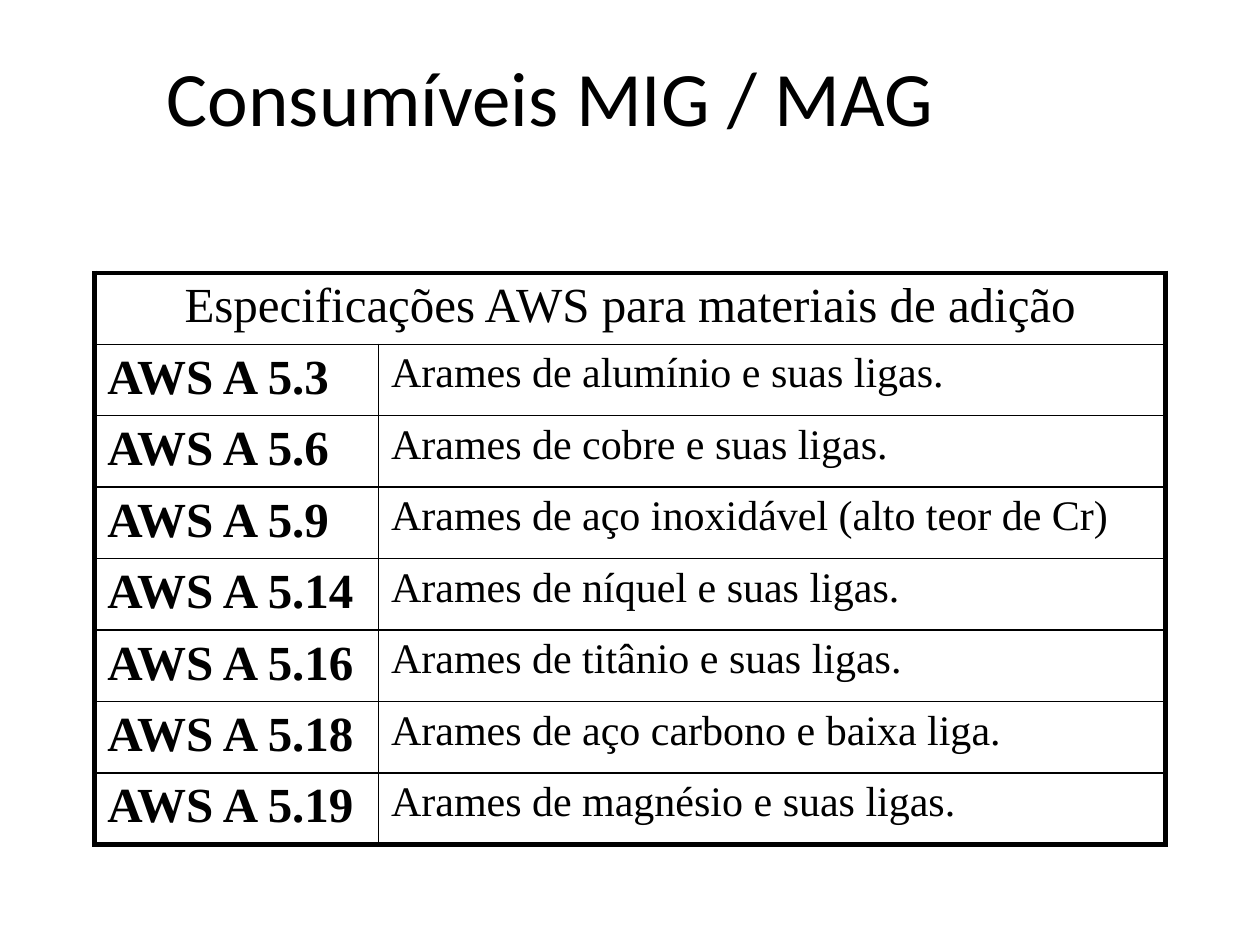
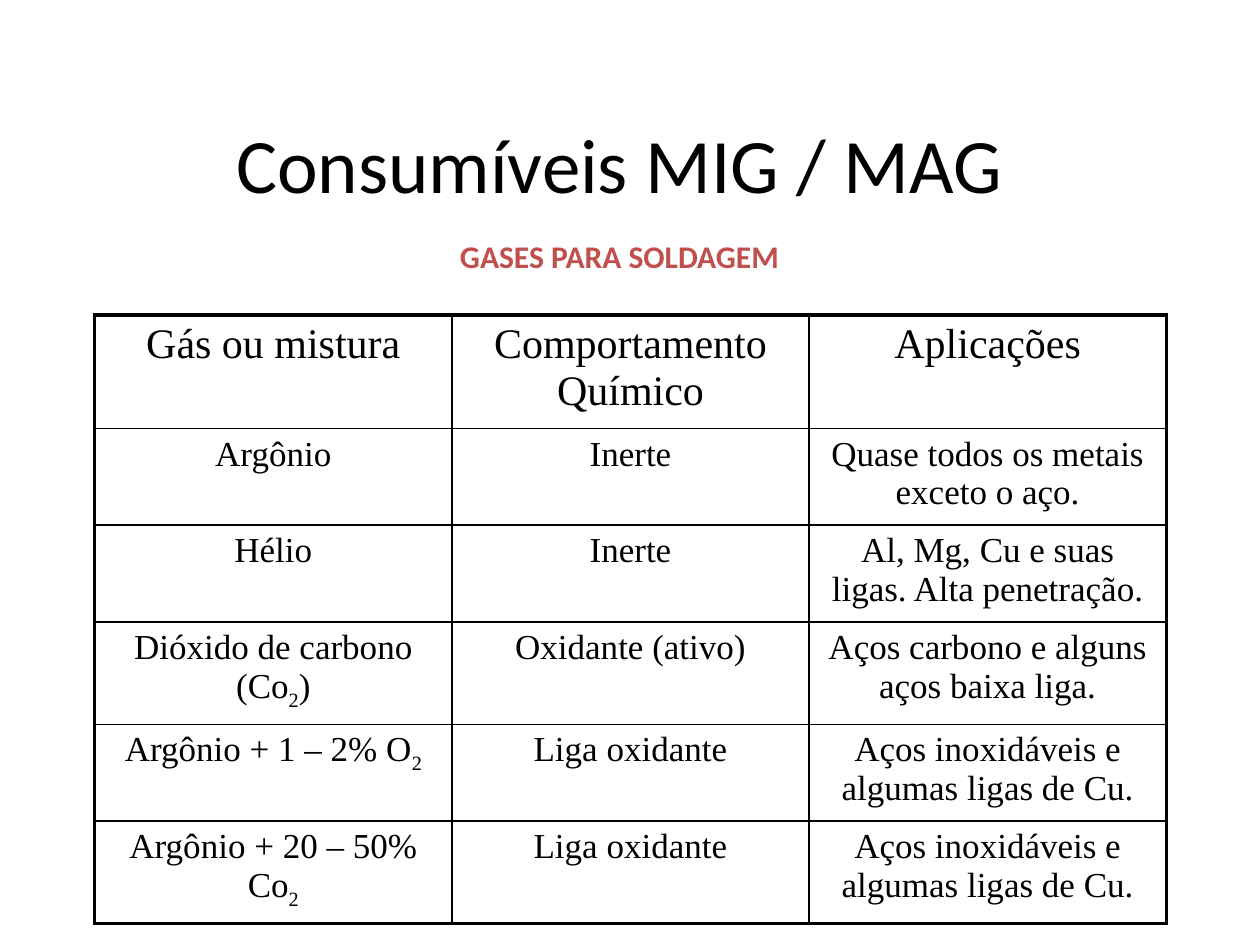
from dataclasses import dataclass

from lxml import etree
from pptx import Presentation
from pptx import util as u
from pptx.dml import color
from pptx.enum import text
from pptx.oxml import ns

LEFT, CENTER = text.PP_ALIGN.LEFT, text.PP_ALIGN.CENTER


@dataclass(frozen=True)
class Theme:
    ink: str = "000000"
    accent: str = "C0504D"
    title_font: str = "Calibri"
    table_font: str = "Times New Roman"
    title_size: int = 44
    subtitle_size: int = 18
    large: int = 28
    medium: int = 24
    small: int = 20
    grid_line: float = 1


@dataclass(frozen=True)
class Box:
    """Position and size in centimetres."""
    left: float
    top: float
    width: float
    height: float

    def lengths(self) -> list[u.Cm]:
        return [u.Cm(value) for value in (self.left, self.top, self.width, self.height)]


@dataclass(frozen=True)
class TextStyle:
    font: str
    size: int
    bold: bool = False
    align: text.PP_ALIGN = CENTER
    colour: str = Theme.ink


@dataclass(frozen=True)
class TableDesign:
    box: Box
    columns: list[float]
    row_heights: list[float]
    frame_line: float
    header_style: TextStyle
    column_styles: list[TextStyle]


THEME = Theme()
TITLE = "Consumíveis MIG / MAG"
TITLE_STYLE = TextStyle(THEME.title_font, THEME.title_size)
SUBTITLE_STYLE = TextStyle(THEME.title_font, THEME.subtitle_size, True, colour=THEME.accent)

WIRE_HEADER = "Especificações AWS para materiais de adição"
WIRE_ROWS = [
    ("AWS A 5.3", "Arames de alumínio e suas ligas."),
    ("AWS A 5.6", "Arames de cobre e suas ligas."),
    ("AWS A 5.9", "Arames de aço inoxidável (alto teor de Cr)"),
    ("AWS A 5.14", "Arames de níquel e suas ligas."),
    ("AWS A 5.16", "Arames de titânio e suas ligas."),
    ("AWS A 5.18", "Arames de aço carbono e baixa liga."),
    ("AWS A 5.19", "Arames de magnésio e suas ligas."),
]
WIRE_TABLE = TableDesign(
    box=Box(1.91, 5.5, 21.59, 11.52),
    columns=[5.72, 15.87],
    row_heights=[1.44] * 8,
    frame_line=3,
    header_style=TextStyle(THEME.table_font, THEME.large),
    column_styles=[
        TextStyle(THEME.table_font, THEME.large, True, LEFT),
        TextStyle(THEME.table_font, THEME.medium, align=LEFT),
    ],
)

# An underscore makes the next character a subscript.
GAS_ROWS = [
    ("Gás ou mistura", "Comportamento Químico", "Aplicações"),
    ("Argônio", "Inerte", "Quase todos os metais exceto o aço."),
    ("Hélio", "Inerte", "Al, Mg, Cu e suas ligas. Alta penetração."),
    ("Dióxido de carbono (Co_2)", "Oxidante (ativo)", "Aços carbono e alguns aços baixa liga."),
    ("Argônio + 1 – 2% O_2", "Liga oxidante", "Aços inoxidáveis e algumas ligas de Cu."),
    ("Argônio + 20 – 50% Co_2", "Liga oxidante", "Aços inoxidáveis e algumas ligas de Cu."),
]
GAS_TABLE = TableDesign(
    box=Box(1.91, 6.35, 21.59, 12.03),
    columns=[7.2] * 3,
    row_heights=[2.28] + [1.95] * 5,
    frame_line=2.25,
    header_style=TextStyle(THEME.table_font, THEME.medium),
    column_styles=[TextStyle(THEME.table_font, THEME.small)] * 3,
)


def write(frame, content: str, style: TextStyle) -> None:
    para = frame.paragraphs[0]
    para.alignment = style.align
    para.font.name = style.font
    para.font.size = u.Pt(style.size)
    para.font.bold = style.bold
    para.font.color.rgb = color.RGBColor.from_string(style.colour)
    plain, *marked = content.split("_")
    para.add_run().text = plain
    for piece in marked:
        span = para.add_run()
        span.text = piece[0]
        span._r.get_or_add_rPr().set("baseline", "-25000")
        if piece[1:]:
            para.add_run().text = piece[1:]


def set_borders(cell, widths: list[float]) -> None:
    """Draw the left, right, top and bottom borders, with widths in points."""
    properties = cell._tc.get_or_add_tcPr()
    for index, (side, width) in enumerate(zip("LRTB", widths)):
        line = etree.Element(ns.qn(f"a:ln{side}"), w=str(u.Pt(width)))
        fill = etree.SubElement(line, ns.qn("a:solidFill"))
        etree.SubElement(fill, ns.qn("a:srgbClr"), val=THEME.ink)
        properties.insert(index, line)


def add_grid(page, design: TableDesign, rows: list[tuple[str, ...]]) -> None:
    """Add a framed table; a row with one text spans all columns."""
    row_count, column_count = len(rows), len(design.columns)
    table = page.shapes.add_table(row_count, column_count, *design.box.lengths()).table
    table.first_row = table.horz_banding = False
    for column, width in zip(table.columns, design.columns):
        column.width = u.Cm(width)
    for row, height in zip(table.rows, design.row_heights):
        row.height = u.Cm(height)

    for r, texts in enumerate(rows):
        if len(texts) == 1:
            table.cell(r, 0).merge(table.cell(r, column_count - 1))
        for c in range(column_count):
            cell = table.cell(r, c)
            cell.fill.background()
            last_column = c + cell.span_width - 1 if cell.is_merge_origin else c
            on_frame = [c == 0, last_column == column_count - 1, r == 0, r == row_count - 1]
            set_borders(cell, [design.frame_line if edge else THEME.grid_line for edge in on_frame])
            if c < len(texts):
                style = design.column_styles[c] if r else design.header_style
                write(cell.text_frame, texts[c], style)


def add_page(deck, title_box: Box):
    """Add a slide with the shared title."""
    page = deck.slides.add_slide(deck.slide_layouts.get_by_name("Title Only"))
    title = page.shapes.title
    title.left, title.top, title.width, title.height = title_box.lengths()
    title.text_frame.vertical_anchor = text.MSO_ANCHOR.MIDDLE
    write(title.text_frame, TITLE, TITLE_STYLE)
    return page


def add_subtitle(page, content: str, box: Box) -> None:
    frame = page.shapes.add_textbox(*box.lengths()).text_frame
    frame.word_wrap = False
    frame.auto_size = text.MSO_AUTO_SIZE.SHAPE_TO_FIT_TEXT
    write(frame, content, SUBTITLE_STYLE)


def main() -> None:
    deck = Presentation()
    deck.slide_width, deck.slide_height = u.Cm(25.4), u.Cm(19.05)

    wires = add_page(deck, Box(0.3, 0.33, 21.59, 3.18))
    add_grid(wires, WIRE_TABLE, [(WIRE_HEADER,), *WIRE_ROWS])

    gases = add_page(deck, Box(1.7, 1.91, 21.59, 2.75))
    add_subtitle(gases, "GASES PARA SOLDAGEM", Box(6.99, 4.65, 11, 1.27))
    add_grid(gases, GAS_TABLE, GAS_ROWS)

    deck.save("out.pptx")


if __name__ == "__main__":
    main()
